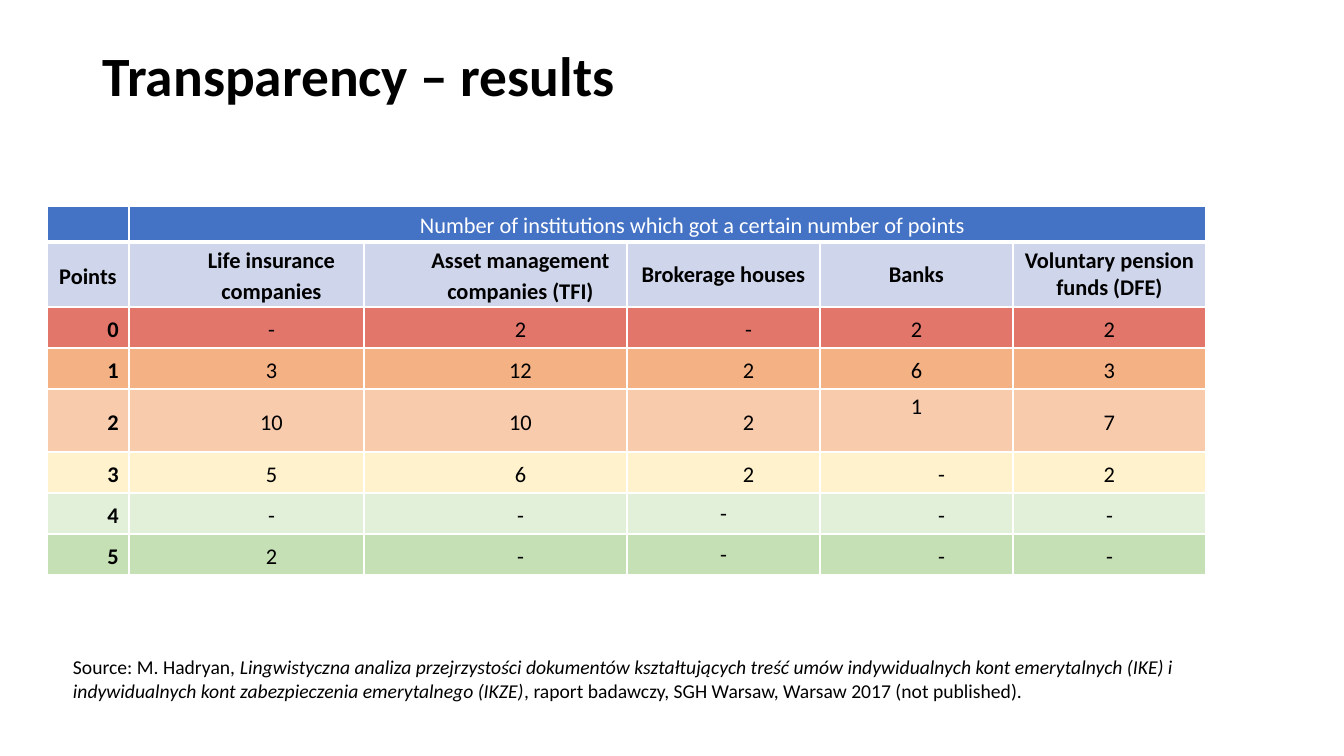
from lxml import etree
from pptx import Presentation, util as u
from pptx.dml.color import RGBColor
from pptx.enum import text
from pptx.oxml.ns import qn

FONT = "Calibri"
TITLE = "Transparency – results"
BANNER = "Number of institutions which got a certain number of points"
HEADINGS = ["Points", "Life insurance companies", "Asset management companies (TFI)",
            "Brokerage houses", "Banks", "Voluntary pension funds (DFE)"]
SCORES = [
    ["0", "-", "2", "-", "2", "2"],
    ["1", "3", "12", "2", "6", "3"],
    ["2", "10", "10", "2", "1", "7"],
    ["3", "5", "6", "2", "-", "2"],
    ["4", "-", "-", "-", "-", "-"],
    ["5", "2", "-", "-", "-", "-"],
]
ROWS = [["", BANNER, "", "", "", ""], HEADINGS] + SCORES
ROW_FILLS = ["4472C4", "CFD5EA", "E3766B", "F4B183", "F8CBAD", "FFF2CC", "E2F0D9", "C5E0B4"]
ROW_HEIGHTS = [36, 65, 41, 41, 63, 41, 41, 41]
COL_WIDTHS = [82, 235, 263, 193, 193, 193]
COMPACT_CELLS = {(1, 3), (1, 4), (1, 5), (6, 3), (7, 3)}
TOP_CELLS = {(4, 4)}
SOURCE = [
    ("Source: M. Hadryan, ", False),
    ("Lingwistyczna analiza przejrzystości dokumentów kształtujących treść umów "
     "indywidualnych kont emerytalnych (IKE) i indywidualnych kont zabezpieczenia "
     "emerytalnego (IKZE)", True),
    (", raport badawczy, SGH Warsaw, Warsaw 2017 (not published).", False),
]


def px(length):
    return u.Emu(round(length * 914400 / 100.8))


def color(value):
    return RGBColor.from_string(value)


def add_span(para, words, size, hue="000000", bold=False, italic=False):
    span = para.add_run()
    span.text = words
    font = span.font
    font.name, font.size, font.bold, font.italic = FONT, u.Pt(size), bold, italic
    font.color.rgb = color(hue)


def add_box(page, left, top, width, height):
    box = page.shapes.add_textbox(px(left), px(top), px(width), px(height))
    box.text_frame.word_wrap = True
    return box.text_frame


def add_borders(cell, bottom, top):
    properties = cell._tc.get_or_add_tcPr()
    weights = {"a:lnL": 1, "a:lnR": 1, "a:lnT": top, "a:lnB": bottom}
    for position, (side, points) in enumerate(weights.items()):
        line = etree.Element(qn(side), w=str(u.Pt(points)))
        fill = etree.SubElement(line, qn("a:solidFill"))
        etree.SubElement(fill, qn("a:srgbClr"), val="FFFFFF")
        properties.insert(position, line)


def is_indented(row, col, words):
    if row == 0:
        return True
    if row == 1:
        return col in (1, 2)
    return col < 4 or (col == 4 and words == "-")


def fill_cell(cell, row, col, words):
    compact = (row, col) in COMPACT_CELLS
    cell.fill.solid()
    cell.fill.fore_color.rgb = color(ROW_FILLS[row])
    add_borders(cell, bottom=3 if row == 0 else 1, top=3 if row == 1 else 1)
    cell.vertical_anchor = (text.MSO_ANCHOR.TOP if (row, col) in TOP_CELLS
                            else text.MSO_ANCHOR.MIDDLE)
    if not compact:
        cell.margin_left = cell.margin_right = px(7)
        cell.margin_top = cell.margin_bottom = 0
    if not words:
        return
    para = cell.text_frame.paragraphs[0]
    para.alignment = text.PP_ALIGN.CENTER
    if not compact:
        para.line_spacing = 1.15
        if is_indented(row, col, words):
            para._p.get_or_add_pPr().set("marL", str(px(50)))
    add_span(para, words, 16, "FFFFFF" if row == 0 else "000000",
             bold=row == 1 or (row > 1 and col == 0))


def add_results(page):
    frame = page.shapes.add_table(len(ROWS), len(COL_WIDTHS), px(47), px(206),
                                  px(sum(COL_WIDTHS)), px(sum(ROW_HEIGHTS)))
    table = frame.table
    table.first_row = table.horz_banding = False
    for column, width in zip(table.columns, COL_WIDTHS):
        column.width = px(width)
    for line, height in zip(table.rows, ROW_HEIGHTS):
        line.height = px(height)
    for row, values in enumerate(ROWS):
        for col, words in enumerate(values):
            fill_cell(table.cell(row, col), row, col, words)
    table.cell(0, 1).merge(table.cell(0, len(COL_WIDTHS) - 1))


def main():
    deck = Presentation()
    deck.slide_width, deck.slide_height = px(1344), px(756)
    page = deck.slides.add_slide(deck.slide_layouts[6])

    title = add_box(page, 93, 50, 1159, 58)
    title.vertical_anchor = text.MSO_ANCHOR.MIDDLE
    title.paragraphs[0].line_spacing = 0.9
    add_span(title.paragraphs[0], TITLE, 39.6, bold=True)

    add_results(page)

    source = add_box(page, 63, 650, 1159, 58)
    for words, italic in SOURCE:
        add_span(source.paragraphs[0], words, 14, italic=italic)

    deck.save("out.pptx")


if __name__ == "__main__":
    main()
